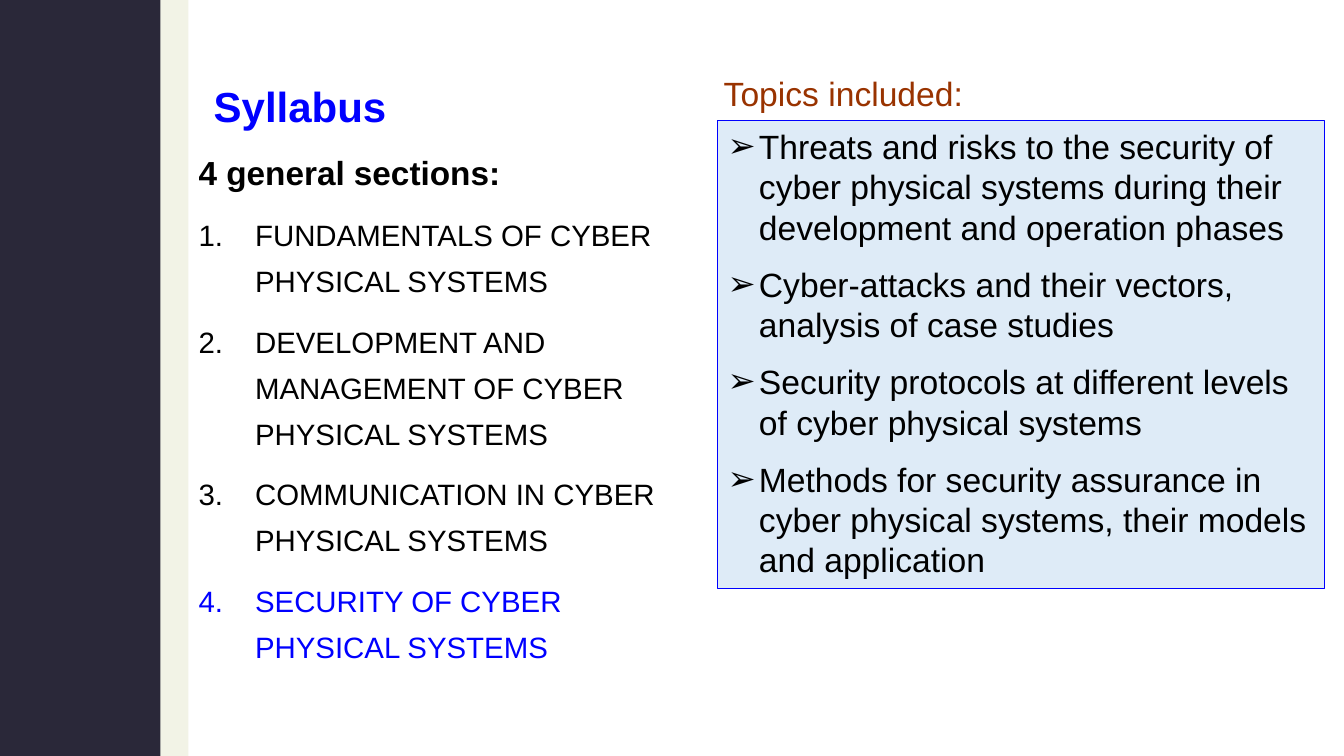
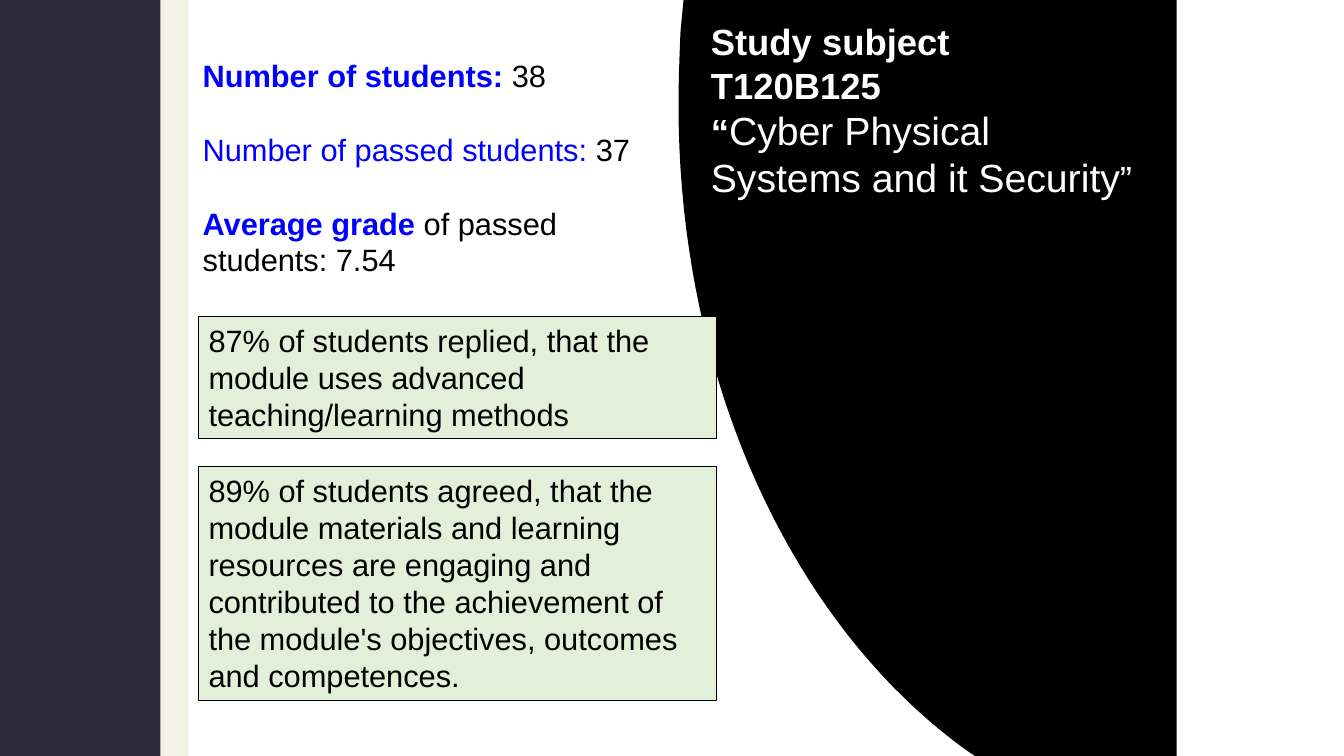
from lxml.etree import SubElement
from pptx import Presentation
from pptx.dml.color import RGBColor
from pptx.enum.shapes import MSO_SHAPE
from pptx.enum.text import MSO_ANCHOR, MSO_AUTO_SIZE as FIT, PP_ALIGN
from pptx.oxml.ns import qn
from pptx.util import Emu, Inches, Pt

WIDTH, HEIGHT = Inches(13.33), Inches(7.5)
FONT = "Arial"
COLORS = {
    "cream": "F2F3E6", "navy": "2A2839", "blue": "0000FF", "black": "000000",
    "white": "FFFFFF", "rust": "993300", "sky": "DEEBF7", "mint": "E2F0D9",
}
LEFT = 14.78  # left edge of the main column, in percent of the width


def rgb(name):
    return RGBColor.from_string(COLORS[name])


def across(percent):
    return Emu(round(WIDTH * percent / 100))


def down(percent):
    return Emu(round(HEIGHT * percent / 100))


def area(left, top, width, height):
    """Turn percentages of the slide into lengths."""
    return across(left), down(top), across(width), down(height)


def set_all(target, values):
    for name, value in values.items():
        setattr(target, name, value)


# Text
def run(text, size, color="black", bold=False):
    return text, color, {"size": Pt(size), "bold": bold, "name": FONT}


def set_bullet(paragraph, bullet, indent):
    """Bullet is None, "auto" for numbers, or the character to use."""
    properties = paragraph._p.get_or_add_pPr()
    properties.set("marL", str(Inches(indent)))
    properties.set("indent", str(-Inches(indent)))
    if bullet is None:
        SubElement(properties, qn("a:buNone"))
    elif bullet == "auto":
        SubElement(properties, qn("a:buAutoNum"), type="arabicPeriod")
    else:
        SubElement(properties, qn("a:buFont"), typeface=FONT)
        SubElement(properties, qn("a:buChar"), char=bullet)


def write(shape, paragraphs, bullets=None, indent=0, before=0, after=0,
          spacing=1.0, **frame_format):
    """Fill a shape; each paragraph is a list of runs."""
    frame = shape.text_frame
    set_all(frame, {"word_wrap": True, "auto_size": FIT.NONE,
                    "vertical_anchor": MSO_ANCHOR.TOP} | frame_format)
    bullets = bullets or [None] * len(paragraphs)
    for i, (runs, bullet) in enumerate(zip(paragraphs, bullets)):
        paragraph = frame.add_paragraph() if i else frame.paragraphs[0]
        set_bullet(paragraph, bullet, indent if bullet else 0)
        set_all(paragraph, {"alignment": PP_ALIGN.LEFT, "line_spacing": spacing,
                            "space_before": Pt(before if i else 0),
                            "space_after": Pt(after)})
        for text, color, font_format in runs:
            piece = paragraph.add_run()
            piece.text = text
            piece.font.color.rgb = rgb(color)
            set_all(piece.font, font_format)


# Kinds of element
def paint(shape, fill, line=None):
    shape.shadow.inherit = False
    shape.fill.solid()
    shape.fill.fore_color.rgb = rgb(fill)
    if line:
        shape.line.color.rgb = rgb(line)
        shape.line.width = Pt(0.75)
    else:
        shape.line.fill.background()
    return shape


def add_box(slide, place, fill, line=None):
    return paint(slide.shapes.add_shape(MSO_SHAPE.RECTANGLE, *area(*place)), fill, line)


def place_holder(placeholder, place):
    set_all(placeholder, dict(zip(("left", "top", "width", "height"), area(*place))))
    return placeholder


def curve(start, control_1, control_2, end, steps=40):
    """Points of a cubic curve, without its start."""
    for step in range(1, steps + 1):
        t = step / steps
        u = 1 - t
        weights = u ** 3, 3 * u * u * t, 3 * u * t * t, t ** 3
        yield tuple(sum(w * point[axis] for w, point in
                        zip(weights, (start, control_1, control_2, end)))
                    for axis in (0, 1))


def add_black_arc(slide):
    low, leftmost, high = (71.87, 99.2), (50.49, 14), (50.64, 4.13)
    outline = [(50.86, 0), (87.55, 0), (87.55, 100), (72.54, 100), low,
               *curve(low, (59.11, 82.8), (50.49, 50.8), leftmost),
               *curve(leftmost, (50.49, 10.67), (50.56, 7.33), high)]
    points = [(across(x), down(y)) for x, y in outline]
    builder = slide.shapes.build_freeform(*points[0])
    builder.add_line_segments(points[1:], close=True)
    paint(builder.convert_to_shape(), "black")


def add_master_bands(deck, slide):
    """Draw the side bands and move them behind everything on the master."""
    tree = deck.slide_master.shapes.element
    for i, (width, color) in enumerate(((14.03, "cream"), (11.93, "navy"))):
        tree.insert(2 + i, add_box(slide, (0, 0, width, 100), color).element)


# Slides
def fill_syllabus(slide):
    title, sections = slide.placeholders
    write(place_holder(title, (15.15, 4.67, 50.79, 19.6)),
          [[run("Syllabus", 30, "blue", True)]], spacing=0.9, after=6,
          vertical_anchor=MSO_ANCHOR.MIDDLE)

    names = ["FUNDAMENTALS OF CYBER PHYSICAL SYSTEMS",
             "DEVELOPMENT AND MANAGEMENT OF CYBER PHYSICAL SYSTEMS",
             "COMMUNICATION IN CYBER PHYSICAL SYSTEMS"]
    write(place_holder(sections, (LEFT, 19.33, 34.73, 75.07)),
          [[run("4 general sections:", 23.8, bold=True)],
           *([run(name, 21)] for name in names),
           [run("SECURITY OF CYBER PHYSICAL SYSTEMS", 21, "blue")]],
          bullets=[None] + ["auto"] * 4, indent=0.56, before=10, spacing=Pt(33),
          margin_left=0, margin_top=0)

    topics = ["Threats and risks to the security of cyber physical systems "
              "during their development and operation phases",
              "Cyber-attacks and their vectors, analysis of case studies",
              "Security protocols at different levels of cyber physical systems",
              "Methods for security assurance in cyber physical systems, "
              "their models and application"]
    write(add_box(slide, (53.41, 16, 45.16, 61.87), "sky", "blue"),
          [[run(topic, 24)] for topic in topics], bullets=["➢"] * len(topics),
          indent=0.31, before=6, after=6, auto_size=FIT.SHAPE_TO_FIT_TEXT)
    write(slide.shapes.add_textbox(*area(53.11, 8.93, 22.88, 6.67)),
          [[run("Topics included:", 24, "rust")]], auto_size=FIT.SHAPE_TO_FIT_TEXT)


def fill_results(slide):
    title, figures = slide.placeholders
    add_black_arc(slide)
    slide.shapes.element.append(title.element)  # bring the title over the arc
    write(place_holder(title, (52.14, 1.87, 33.76, 25.6)),
          [[run("Study subject", 26, "white", True)],
           [run("T120B125", 26, "white", True)],
           [run("“", 26, "white", True),
            run("Cyber Physical Systems and it Security", 28, "white"),
            run("”", 26, "white")]])

    write(place_holder(figures, (14.33, 6.8, 35.26, 35.87)),
          [[run("Number of students: ", 22, "blue", True), run("38", 22)],
           [run("Number of passed students: ", 22, "blue"), run("37", 22)],
           [run("Average grade ", 22, "blue", True),
            run("of passed students: 7.54", 22)]], before=26.4)

    replies = [
        (41.87, 16.13, "87% of students replied, that the module uses advanced "
                       "teaching/learning methods"),
        (61.73, 30.93, "89% of students agreed, that the module materials and "
                       "learning resources are engaging and contributed to the "
                       "achievement of the module's objectives, outcomes and "
                       "competences."),
    ]
    for top, height, reply in replies:
        write(add_box(slide, (LEFT, top, 38.56, height), "mint", "black"),
              [[run(reply, 22)]], auto_size=FIT.SHAPE_TO_FIT_TEXT)


def main():
    deck = Presentation()
    deck.slide_width, deck.slide_height = WIDTH, HEIGHT
    layout = deck.slide_layouts.get_by_name("Title and Content")
    syllabus, results = (deck.slides.add_slide(layout) for _ in range(2))
    add_master_bands(deck, syllabus)
    fill_syllabus(syllabus)
    fill_results(results)
    deck.save("out.pptx")


if __name__ == "__main__":
    main()
